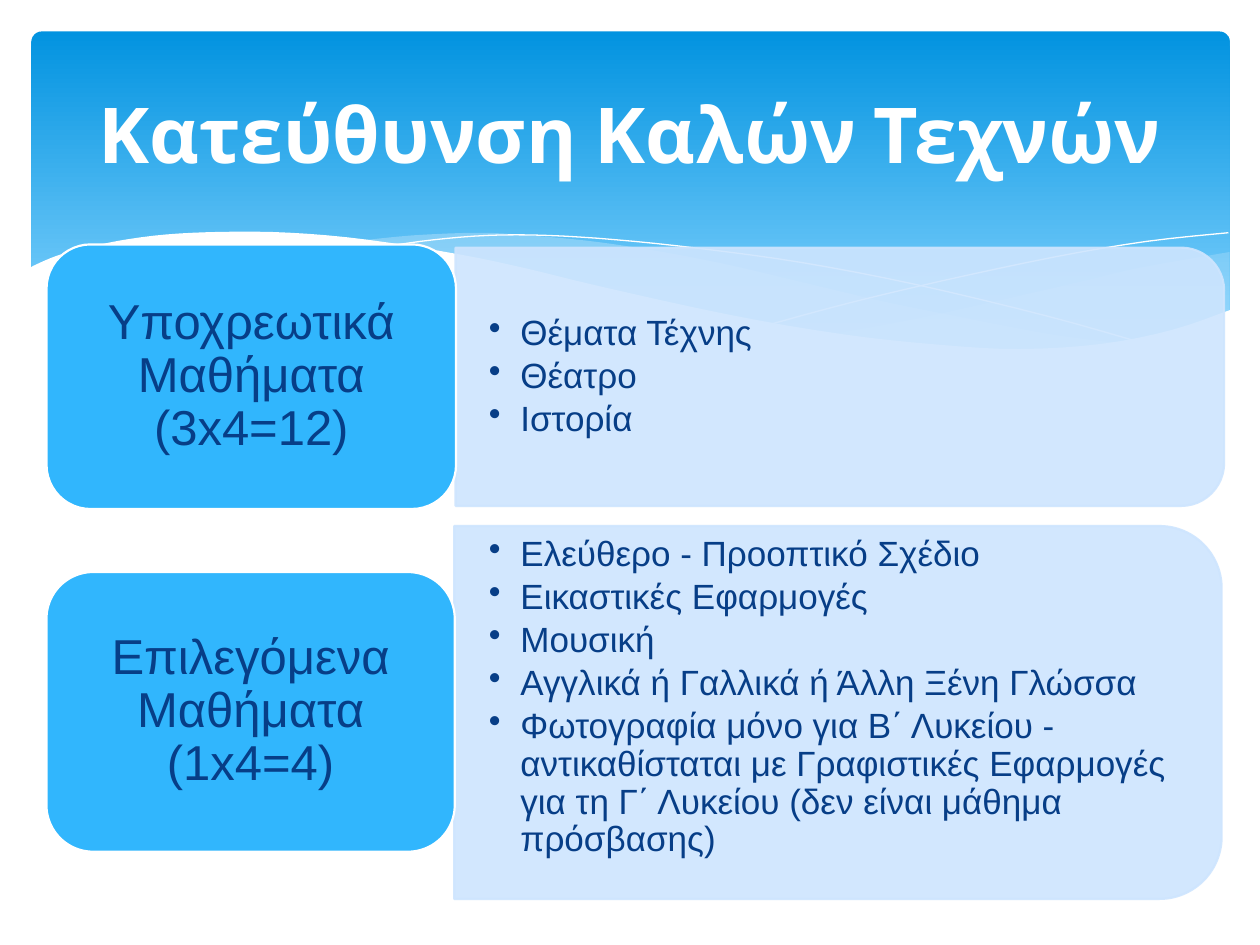
import lxml.etree
import pptx
import pptx.dml.color
import pptx.enum.shapes
import pptx.enum.text
import pptx.oxml.ns
import pptx.util

Pt = pptx.util.Pt
SHAPES = pptx.enum.shapes.MSO_SHAPE
ALIGN = pptx.enum.text.PP_ALIGN
COLORS = {
    "sky": "0293E0",
    "light_sky": "83D3FE",
    "mist": "C6E7FC",
    "panel": "CEE5FE",
    "label": "31B6FD",
    "navy": "073E87",
    "white": "FFFFFF",
}


def smooth(points, steps=4):
    """Return a Catmull-Rom curve through the points."""
    padded = [points[0], *points, points[-1]]
    curve = []
    for a, b, c, d in zip(padded, padded[1:], padded[2:], padded[3:]):
        for step in range(steps):
            t = step / steps
            curve.append(tuple(
                q + t / 2 * (r - p + t * (2 * p - 5 * q + 4 * r - s + t * (3 * (q - r) + s - p)))
                for p, q, r, s in zip(a, b, c, d)
            ))
    return curve + [points[-1]]


class SlideBuilder:
    """Draws styled elements on one slide, with lengths in points."""

    def __init__(self, slide):
        self.slide = slide

    def color(self, name):
        return pptx.dml.color.RGBColor.from_string(COLORS[name])

    def paint(self, fill, name, opacity=100):
        fill.solid()
        fill.fore_color.rgb = self.color(name)
        if opacity < 100:
            color = fill._xPr.find(".//" + pptx.oxml.ns.qn("a:srgbClr"))
            lxml.etree.SubElement(color, pptx.oxml.ns.qn("a:alpha"), val=str(opacity * 1000))

    def shape(self, kind, box):
        shape = self.slide.shapes.add_shape(kind, *map(Pt, box))
        shape.shadow.inherit = False
        return shape

    def banner(self, box):
        shape = self.shape(SHAPES.ROUNDED_RECTANGLE, box)
        shape.adjustments[0] = 0.03
        shape.line.fill.background()
        shape.fill.gradient()
        shape.fill.gradient_angle = 270
        stops = zip(shape.fill.gradient_stops, ("sky", "light_sky"), (0, 0.9))
        for stop, name, position in stops:
            stop.color.rgb = self.color(name)
            stop.position = position

    def outline(self, points, closed):
        start, *rest = [(Pt(x), Pt(y)) for x, y in points]
        builder = self.slide.shapes.build_freeform(*start)
        builder.add_line_segments(rest, close=closed)
        shape = builder.convert_to_shape()
        shape.shadow.inherit = False
        return shape

    def wave(self, points, name, opacity=100):
        shape = self.outline(points, True)
        self.paint(shape.fill, name, opacity)
        shape.line.fill.background()

    def ripple(self, points):
        shape = self.outline(smooth(points), False)
        shape.fill.background()
        self.paint(shape.line.fill, "white")
        shape.line.width = Pt(0)

    def set_text(self, shape, lines, size, name="navy", font="Arial", insets=(7.2, 3.6, 7.2, 3.6),
                 align=ALIGN.CENTER, spacing=0.9, after=0, bold=False, bullets=False):
        frame = shape.text_frame
        frame.word_wrap = True
        frame.vertical_anchor = pptx.enum.text.MSO_ANCHOR.MIDDLE
        frame.margin_left, frame.margin_top, frame.margin_right, frame.margin_bottom = map(Pt, insets)
        for index, line in enumerate(lines):
            paragraph = frame.add_paragraph() if index else frame.paragraphs[0]
            paragraph.add_run().text = line
            paragraph.alignment = align
            paragraph.line_spacing = spacing
            paragraph.space_after = Pt(after)
            if bullets:
                paragraph.level = 1
                properties = paragraph._p.get_or_add_pPr()
                properties.set("marL", str(Pt(18)))
                properties.set("indent", str(-Pt(18)))
                lxml.etree.SubElement(properties, pptx.oxml.ns.qn("a:buChar"), char="•")
            paragraph.font.size = Pt(size)
            paragraph.font.name = font
            paragraph.font.bold = bold
            paragraph.font.color.rgb = self.color(name)

    def title(self, box, text):
        shape = self.slide.shapes.add_textbox(*map(Pt, box))
        self.set_text(shape, [text], 44, "white", "Cabin", spacing=1, bold=True)

    def panel(self, box):
        left, top, width, height = box
        shift = (width - height) / 2
        shape = self.shape(SHAPES.ROUND_2_SAME_RECTANGLE, (left + shift, top - shift, height, width))
        shape.rotation = 90
        self.paint(shape.fill, "panel", 90)
        self.paint(shape.line.fill, "panel", 90)
        shape.line.width = Pt(1.25)

    def items(self, box, lines, bottom):
        shape = self.slide.shapes.add_textbox(*map(Pt, box))
        self.set_text(shape, lines, 20, insets=(19.4, 10, 19.4, bottom), align=ALIGN.LEFT,
                      after=3, bullets=True)

    def label(self, box, text):
        shape = self.shape(SHAPES.ROUNDED_RECTANGLE, box)
        self.paint(shape.fill, "label")
        self.paint(shape.line.fill, "white")
        shape.line.width = Pt(1.25)
        self.set_text(shape, [text], 28, insets=(8.6, 4.3, 8.6, 4.3))


def draw_waves(builder):
    """Draw the layered waves under the banner."""
    right_top = [(702.7, 144), (652, 153), (620, 160.5), (561, 174), (525, 182), (476, 191)]
    right_bottom = [(476, 191), (518, 196), (554, 199), (586, 200), (623, 199), (659, 194.5),
                    (683, 187), (702.7, 178)]
    builder.wave(smooth(right_top) + smooth(right_bottom), "mist", 29)
    middle_top = [(643, 196.5), (603, 191.5), (558, 183), (508, 173), (453, 160), (410, 150),
                  (370, 142.5), (335, 137.5), (302, 134.5), (274, 133), (236, 134.5), (206, 137.5)]
    middle_bottom = [(206, 137.5), (246, 143), (291, 152), (323, 160), (382, 173), (433, 183.5),
                     (479, 191.5), (520, 197), (557, 199.5), (596, 200), (631, 198), (643, 196.5)]
    builder.wave(smooth(middle_top) + smooth(middle_bottom), "mist", 40)
    builder.ripple([(222.5, 140.5), (248, 137), (279, 134.5), (312, 134.5), (352, 137), (400, 142),
                    (458, 150), (523, 162.5), (598, 180.5), (653, 196)])
    builder.ripple([(441.5, 185), (484, 173.5), (538.5, 160.5), (602, 147), (655, 138), (702, 133)])
    crest = [(703.4, 177), (670, 188.5), (630, 196.5), (582.5, 199.5), (536, 197), (481, 191),
             (417, 180), (342, 163.5), (301, 153.5), (263, 145.5), (210, 137), (165.5, 133),
             (127.5, 132.5), (95, 134), (68.5, 137.5), (48, 142), (33, 146), (21, 151), (16.6, 153.4)]
    builder.wave(smooth(crest) + [(16.6, 236.9), (703.4, 236.9)], "white")


def main():
    """Build and save the slide."""
    presentation = pptx.Presentation()
    presentation.slide_width, presentation.slide_height = Pt(720), Pt(540)
    builder = SlideBuilder(presentation.slides.add_slide(presentation.slide_layouts[6]))
    builder.banner((18, 18, 684.7, 194.4))
    draw_waves(builder)
    builder.title((36, 26.6, 648, 98.6), "Κατεύθυνση Καλών Τεχνών")
    groups = [
        ((260.3, 141.5, 439.2, 147.6), (260, 149, 432, 133.2), 10, (26.6, 139.7, 234, 151.2),
         "Υποχρεωτικά Μαθήματα (3x4=12)",
         ["Θέματα Τέχνης", "Θέατρο", "Ιστορία"]),
        ((259.6, 300.6, 438.5, 213.1), (260, 311, 428.4, 193), 27.5, (26.6, 326.9, 233.3, 159.8),
         "Επιλεγόμενα Μαθήματα (1x4=4)",
         ["Ελεύθερο - Προοπτικό Σχέδιο", "Εικαστικές Εφαρμογές", "Μουσική",
          "Αγγλικά ή Γαλλικά ή Άλλη Ξένη Γλώσσα",
          "Φωτογραφία μόνο για Β΄ Λυκείου - αντικαθίσταται με Γραφιστικές Εφαρμογές "
          "για τη Γ΄ Λυκείου (δεν είναι μάθημα πρόσβασης)"]),
    ]
    for panel_box, items_box, bottom, label_box, heading, courses in groups:
        builder.panel(panel_box)
        builder.items(items_box, courses, bottom)
        builder.label(label_box, heading)
    presentation.save("out.pptx")


if __name__ == "__main__":
    main()
